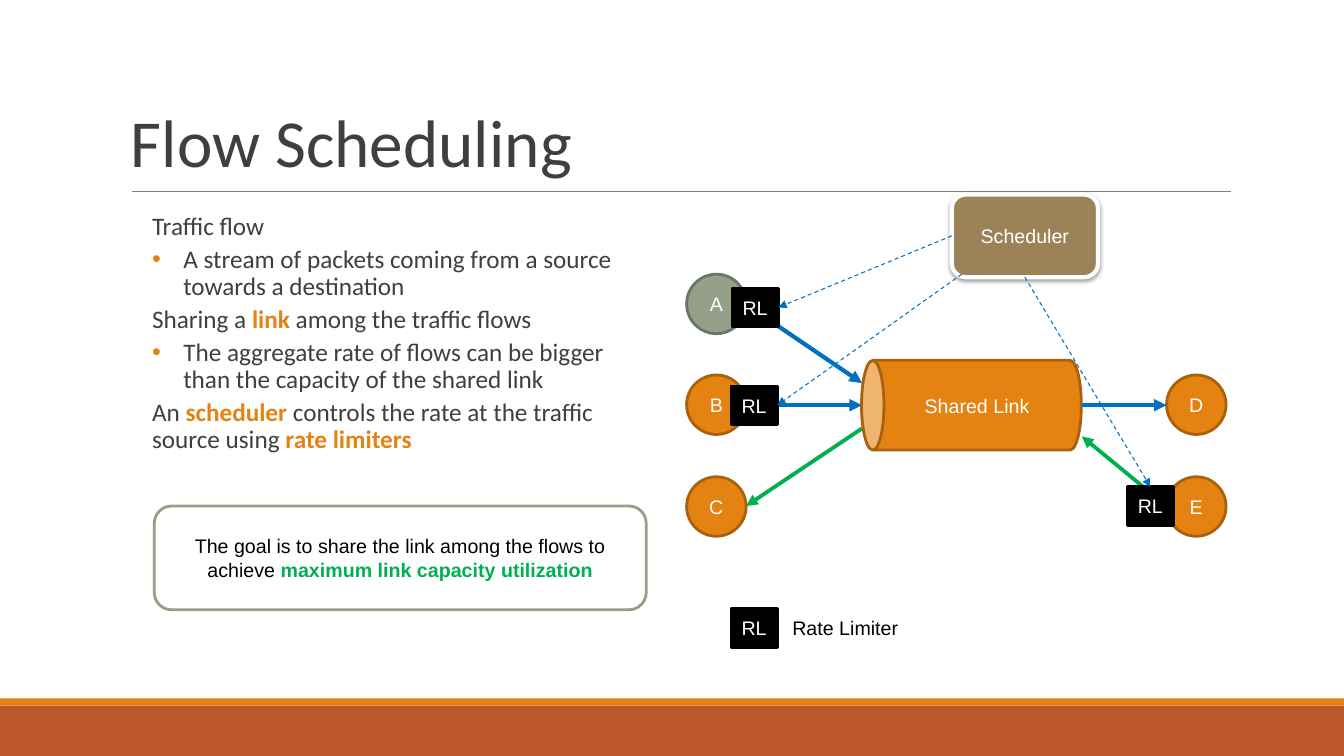
"""Build the Flow Scheduling slide."""
from dataclasses import dataclass

from lxml.etree import SubElement
from pptx import Presentation
from pptx.dml.color import RGBColor
from pptx.enum.dml import MSO_LINE
from pptx.enum.shapes import MSO_CONNECTOR, MSO_SHAPE
from pptx.enum.text import MSO_ANCHOR, PP_ALIGN
from pptx.oxml.ns import qn
from pptx.util import Inches, Pt

ORANGE, DARK_ORANGE, SAGE, DARK_SAGE = "E48312", "A9610D", "94A088", "6D7665"
BLUE, GREEN, GREY, BLACK, WHITE = "0070C0", "00B050", "3F3F3F", "000000", "FFFFFF"


@dataclass(frozen=True)
class Span:
    text: str
    color: str
    bold: bool = False


@dataclass(frozen=True)
class Point:
    text: tuple[Span, ...]
    bullet: bool = False


@dataclass(frozen=True)
class Node:
    label: str
    left: float
    top: float
    fill: str = ORANGE
    line: str = DARK_ORANGE


@dataclass(frozen=True)
class Arrow:
    start: tuple[float, float]
    end: tuple[float, float]
    color: str = BLUE
    width: float = 3


POINTS = (
    Point((Span("Traffic flow", GREY),)),
    Point((Span("A stream of packets coming from a source towards a destination", GREY),), True),
    Point((Span("Sharing a ", GREY), Span("link", ORANGE, True),
           Span(" among the traffic flows", GREY))),
    Point((Span("The aggregate rate of flows can be bigger than the capacity of the shared link",
                GREY),), True),
    Point((Span("An ", GREY), Span("scheduler", ORANGE, True),
           Span(" controls the rate at the traffic source using ", GREY),
           Span("rate limiters", ORANGE, True))),
)
GOAL = (Span("The goal is to share the link among the flows to achieve ", BLACK),
        Span("maximum link capacity utilization", GREEN, True))
SOURCE_LEFT, TARGET_LEFT = 6.81, 11.57
NODES = (
    Node("A", SOURCE_LEFT, 2.72, SAGE, DARK_SAGE),
    Node("B", SOURCE_LEFT, 3.72),
    Node("C", SOURCE_LEFT, 4.73),
    Node("D", TARGET_LEFT, 3.72),
    Node("E", TARGET_LEFT, 4.73),
)
LEFT_FLOWS = (
    Arrow((7.4, 3.02), (8.55, 3.8)),
    Arrow((7.4, 4.02), (8.55, 4.02)),
    Arrow((8.55, 4.25), (7.4, 5.02), GREEN, 2.75),
)
RIGHT_FLOWS = (
    Arrow((10.73, 4.02), (11.57, 4.02)),
    Arrow((11.57, 5.02), (10.73, 4.33), GREEN, 2.75),
)


def rgb(color: str) -> RGBColor:
    return RGBColor.from_string(color)


def write(para, spans: tuple[Span, ...], size: float, font: str) -> None:
    for part in spans:
        span = para.add_run()
        span.text = part.text
        span.font.size, span.font.name = Pt(size), font
        span.font.bold = part.bold
        span.font.color.rgb = rgb(part.color)


def add_box(page, kind, place: tuple[float, float, float, float], fill: str,
            line: str = "", width: float = 2, spans: tuple[Span, ...] = ()):
    box = page.shapes.add_shape(kind, *map(Inches, place))
    box.shadow.inherit = False
    box.fill.solid()
    box.fill.fore_color.rgb = rgb(fill)
    if line:
        box.line.color.rgb = rgb(line)
        box.line.width = Pt(width)
    else:
        box.line.fill.background()
    box.text_frame.vertical_anchor = MSO_ANCHOR.MIDDLE
    para = box.text_frame.paragraphs[0]
    para.alignment = PP_ALIGN.CENTER
    write(para, spans, 14, "Arial")
    return box


def add_text(page, place: tuple[float, float, float, float], inset: float = 0.1):
    frame = page.shapes.add_textbox(*map(Inches, place)).text_frame
    frame.word_wrap = True
    frame.margin_top = frame.margin_bottom = Inches(inset)
    return frame


def add_line(page, start: tuple[float, float], end: tuple[float, float],
             color: str, width: float, head: bool = True):
    link = page.shapes.add_connector(MSO_CONNECTOR.STRAIGHT, *map(Inches, start + end))
    link.line.color.rgb = rgb(color)
    link.line.width = Pt(width)
    if head:
        SubElement(link.line._get_or_add_ln(), qn("a:tailEnd"), type="triangle")
    SubElement(link._element.spPr, qn("a:effectLst"))
    return link


def add_flows(page, flows: tuple[Arrow, ...]) -> None:
    for flow in flows:
        add_line(page, flow.start, flow.end, flow.color, flow.width)


def add_limiter(page, left: float, top: float):
    return add_box(page, MSO_SHAPE.RECTANGLE, (left, top, 0.46, 0.38), BLACK, BLACK,
                   spans=(Span("RL", WHITE),))


def add_scheduler(page):
    box = add_box(page, MSO_SHAPE.ROUNDED_RECTANGLE, (9.44, 1.93, 1.45, 0.82), "9B8357",
                  WHITE, 3, (Span("Scheduler", WHITE),))
    effects = box._element.spPr.find(qn("a:effectLst"))
    shadow = SubElement(effects, qn("a:outerShdw"), blurRad=str(Pt(3.1)), dist=str(Pt(1.6)),
                        dir="5400000", rotWithShape="0")
    tint = SubElement(shadow, qn("a:srgbClr"), val=BLACK)
    SubElement(tint, qn("a:alpha"), val="38000")
    return box


def add_points(page) -> None:
    frame = add_text(page, (1.2, 2.02, 5.4, 4.4))
    for index, point in enumerate(POINTS):
        para = frame.add_paragraph() if index else frame.paragraphs[0]
        para.line_spacing, para.space_before = 0.9, Pt(4)
        props = para._p.get_or_add_pPr()
        props.set("marL", str(Inches(0.52 if point.bullet else 0.21)))
        props.set("indent", str(Inches(-0.31 if point.bullet else 0)))
        if point.bullet:
            SubElement(SubElement(props, qn("a:buClr")), qn("a:srgbClr"), val=ORANGE)
            SubElement(props, qn("a:buFont"), typeface="Arial")
            SubElement(props, qn("a:buChar"), char="•")
        write(para, point.text, 18, "Calibri")


def add_diagram(page) -> None:
    add_flows(page, LEFT_FLOWS)
    for node in NODES:
        add_box(page, MSO_SHAPE.OVAL, (node.left, node.top, 0.59, 0.59), node.fill, node.line,
                spans=(Span(node.label, WHITE),))
    shared = add_box(page, MSO_SHAPE.CAN, (9.19, 2.93, 0.89, 2.18), ORANGE, DARK_ORANGE,
                     spans=(Span("Shared Link", WHITE),))
    shared.rotation = 270
    shared.text_frame._txBody.bodyPr.set("vert", "vert")
    add_flows(page, RIGHT_FLOWS)

    limiter_b = add_limiter(page, 7.25, 3.83)
    limiter_a = add_limiter(page, 7.26, 2.86)
    limiter_e = add_limiter(page, 11.18, 4.83)
    add_limiter(page, 7.25, 6.04)
    legend = add_text(page, (7.76, 6.06, 1.58, 0.34), 0.05)
    write(legend.paragraphs[0], (Span("Rate Limiter", BLACK),), 14, "Arial")

    scheduler = add_scheduler(page)
    for limiter, start_site, end_site in ((limiter_a, 1, 3), (limiter_b, None, 3),
                                          (limiter_e, 2, 0)):
        control = add_line(page, (9.54, 2.72), (7.71, 4.02), BLUE, 0.75)
        control.line.dash_style = MSO_LINE.DASH
        if start_site is not None:
            control.begin_connect(scheduler, start_site)
        control.end_connect(limiter, end_site)


def main() -> None:
    deck = Presentation()
    deck.slide_width, deck.slide_height = Inches(13.33), Inches(7.5)
    page = deck.slides.add_slide(deck.slide_layouts[6])
    add_box(page, MSO_SHAPE.RECTANGLE, (0, 7, 13.33, 0.5), "BD582C")
    add_box(page, MSO_SHAPE.RECTANGLE, (0, 6.93, 13.33, 0.07), ORANGE)
    add_line(page, (1.31, 1.9), (12.21, 1.9), "7F7F7F", 0.75, head=False)
    title = add_text(page, (1.2, 0.31, 11, 1.59))
    title.vertical_anchor = MSO_ANCHOR.BOTTOM
    title.paragraphs[0].line_spacing = 0.85
    write(title.paragraphs[0], (Span("Flow Scheduling", GREY),), 48, "Calibri")
    add_points(page)
    add_diagram(page)
    add_box(page, MSO_SHAPE.ROUNDED_RECTANGLE, (1.53, 5.02, 4.88, 1.03), WHITE, SAGE, spans=GOAL)
    deck.save("out.pptx")


if __name__ == "__main__":
    main()
